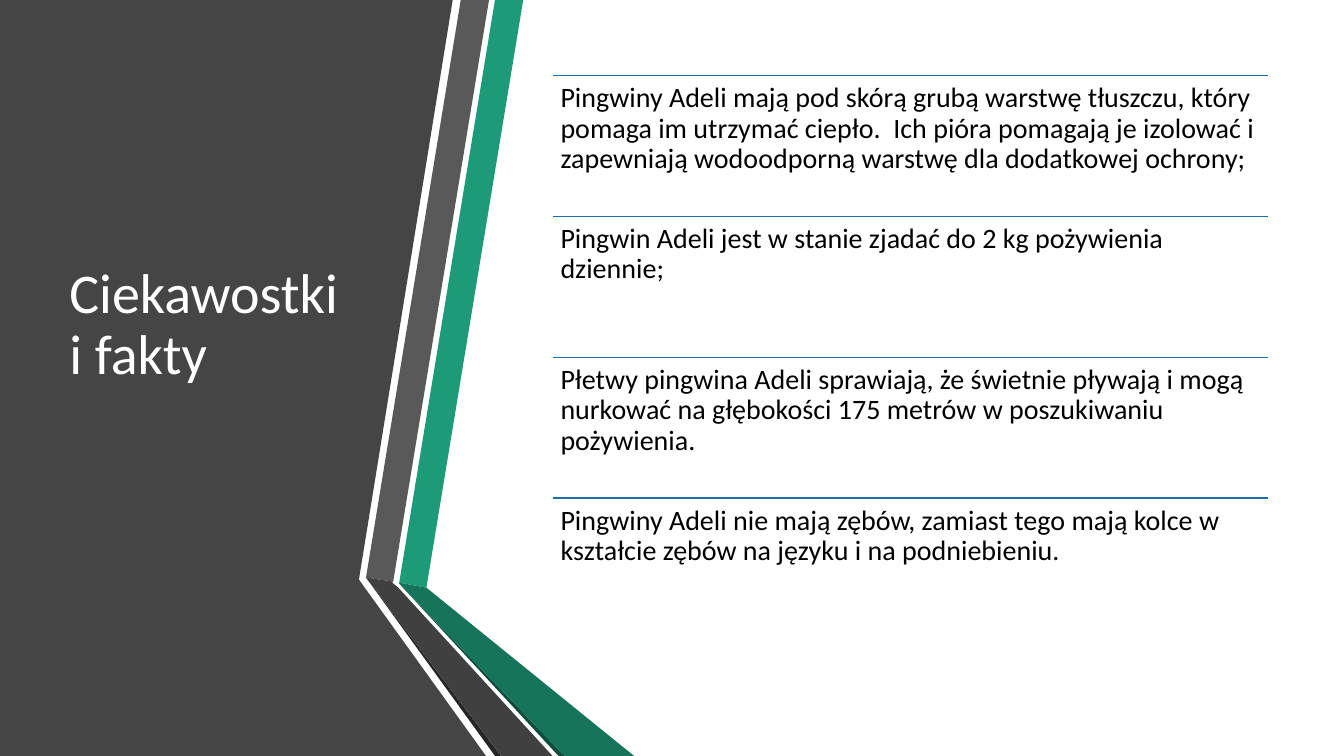
import pptx
import pptx.util
import pptx.dml.color
import pptx.enum.shapes
import pptx.enum.text
import pptx.oxml

COLS, ROWS = 1333, 750
CELL = pptx.util.Inches(0.01)
FONT = "Calibri"
HUES = {
    "panel": "454545", "green": "1D9A78", "gray": "595959",
    "black": "262626", "pine": "0E4D3C", "teal": "16745A",
    "coal": "404040", "rule": "1D6FA9", "title": "FFFFFF", "body": "000000",
}
BANDS = [
    ("panel", [(0, 0), (353, 0), (449, 0), (356, 575), (482, 750), (0, 750)]),
    ("green", [(396, 578), (423, 583), (519, 0), (491, 0)]),
    ("gray", [(485, 0), (457, 0), (363, 573), (390, 577)]),
    ("black", [(363, 573), (491, 750), (497, 750)]),
    ("pine", [(396, 579), (554, 750), (560, 750)]),
    ("teal", [(396, 579), (560, 750), (629, 750), (423, 583), (396, 578)]),
    ("coal", [(548, 750), (395, 583), (389, 578), (390, 577), (363, 573), (497, 750)]),
]
FACTS = [
    "Pingwiny Adeli mają pod skórą grubą warstwę tłuszczu, który pomaga im utrzymać ciepło.  Ich pióra pomagają je izolować i zapewniają wodoodporną warstwę dla dodatkowej ochrony;",
    "Pingwin Adeli jest w stanie zjadać do 2 kg pożywienia dziennie;",
    "Płetwy pingwina Adeli sprawiają, że świetnie pływają i mogą nurkować na głębokości 175 metrów w poszukiwaniu pożywienia.",
    "Pingwiny Adeli nie mają zębów, zamiast tego mają kolce w kształcie zębów na języku i na podniebieniu.",
]


def color(name):
    """Return the named colour."""
    return pptx.dml.color.RGBColor.from_string(HUES[name])


def write(slide, box, text, size, hue, anchor, pads):
    """Write one paragraph in a box, with pads for left, top, right, bottom."""
    frame = slide.shapes.add_textbox(*[round(n * CELL) for n in box]).text_frame
    frame.word_wrap = True
    frame.vertical_anchor = anchor
    (frame.margin_left, frame.margin_top,
     frame.margin_right, frame.margin_bottom) = [n * CELL for n in pads]
    par = frame.paragraphs[0]
    par.text = text
    par.line_spacing = 0.9
    par.font.name = FONT
    par.font.size = pptx.util.Pt(size)
    par.font.color.rgb = color(hue)


def draw_bands(slide, box):
    """Draw the dark panel and its folded ribbons from the box corner."""
    left, top = box[:2]
    for hue, points in BANDS:
        spots = [(left + x, top + y) for x, y in points]
        pen = slide.shapes.build_freeform(*spots[0], scale=CELL)
        pen.add_line_segments(spots[1:], close=True)
        band = pen.convert_to_shape()
        band.shadow.inherit = False
        band.fill.solid()
        band.fill.fore_color.rgb = color(hue)
        band.line.fill.background()


def draw_title(slide, box):
    """Write the slide title a little above the middle of the box."""
    write(slide, box, "Ciekawostki i fakty", 40, "title",
          pptx.enum.text.MSO_ANCHOR.MIDDLE, (10, 5, 10, 66))


def draw_facts(slide, box):
    """Stack the facts in equal rows, each under a rule."""
    left, top, width, height = box
    step = height / len(FACTS)
    for row, fact in enumerate(FACTS):
        y = top + row * step
        ends = [round(n * CELL) for n in (left, y, left + width, y)]
        rule = slide.shapes.add_connector(
            pptx.enum.shapes.MSO_CONNECTOR.STRAIGHT, *ends)
        rule.line.color.rgb = color("rule")
        rule.line.width = pptx.util.Pt(1)
        rule._element.spPr.append(pptx.oxml.parse_xml(
            '<a:effectLst xmlns:a="http://schemas.openxmlformats.org/drawingml/2006/main"/>'))
        write(slide, (left, y, width, step), fact, 20, "body",
              pptx.enum.text.MSO_ANCHOR.TOP, (8, 8, 8, 8))


def main():
    """Build the slide and save it."""
    deck = pptx.Presentation()
    deck.slide_width, deck.slide_height = COLS * CELL, ROWS * CELL
    slide = deck.slides.add_slide(deck.slide_layouts[6])
    draw_bands(slide, (0, 0, COLS, ROWS))
    draw_title(slide, (59, 75, 304, 558))
    draw_facts(slide, (548, 75, 710, 559))
    deck.save("out.pptx")


if __name__ == "__main__":
    main()
